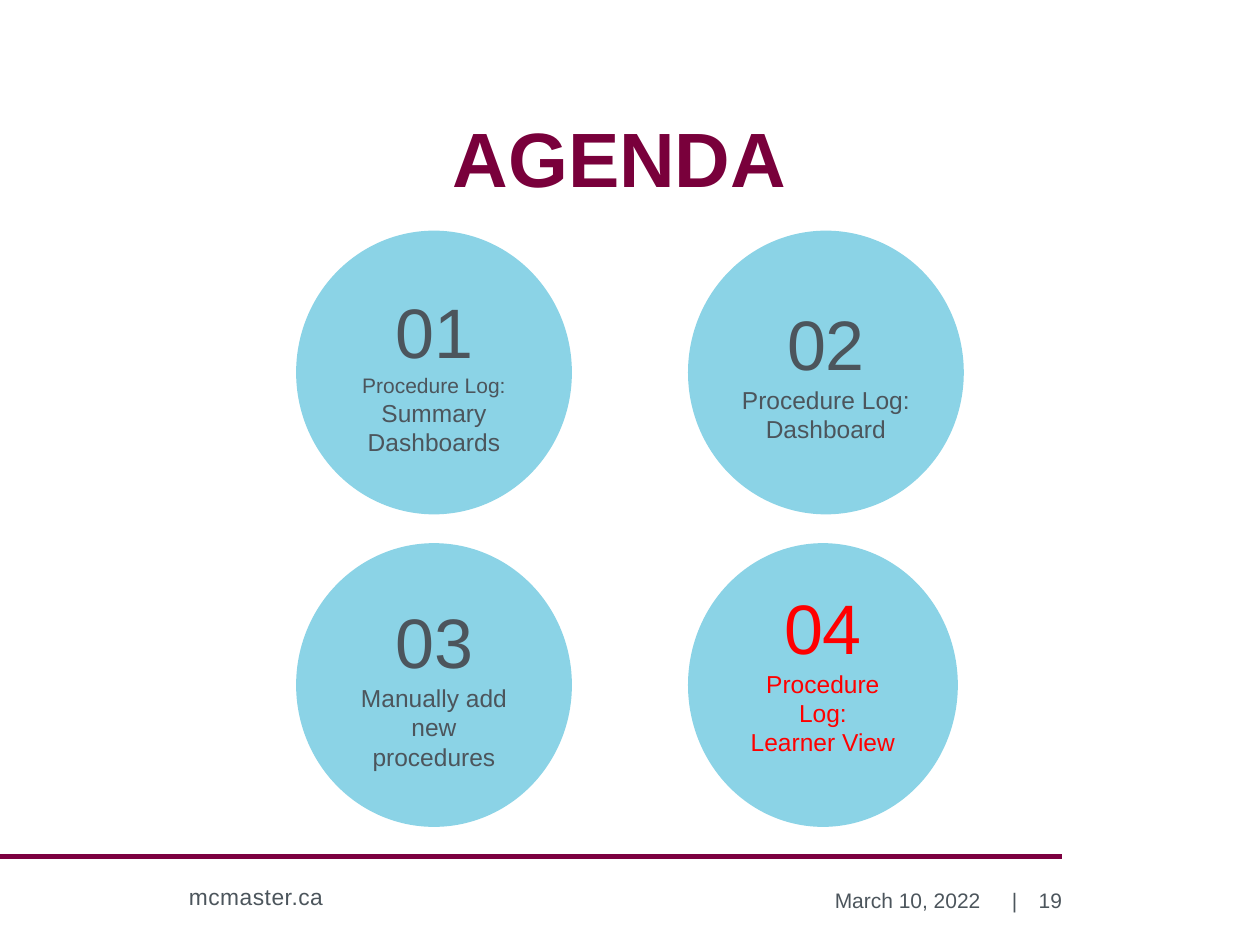
from pptx import Presentation
from pptx.dml.color import RGBColor
from pptx.enum import shapes, text
from pptx.util import Cm, Pt

GREY, RED, SKY = "4C555C", "FF0000", "8BD3E6"
TITLE_MAROON, RULE_MAROON = "79003B", "7C0040"

# number, paragraphs of (text, size) runs, colour, circle width, bottom inset
TOPICS = [
    ("01", [[("Procedure Log: ", 12), ("Summary Dashboards", 14)]], GREY, 5.56, 0.13),
    ("02", [[("Procedure Log: Dashboard", 14)]], GREY, 5.56, 0.13),
    ("03", [[("Manually add new procedures", 14)]], GREY, 5.56, 0.13),
    ("04", [[("Procedure Log:", 14)], [("Learner View", 14)]], RED, 5.44, 0.7),
]
LEFT, TOP, COL_STEP, ROW_STEP, CIRCLE_H = 5.97, 4.65, 7.9, 6.3, 5.72

# text, left, top, width, height, size, alignment, anchor, right inset
L, R = text.PP_ALIGN.LEFT, text.PP_ALIGN.RIGHT
UPPER, MIDDLE = text.MSO_ANCHOR.TOP, text.MSO_ANCHOR.MIDDLE
FOOTER = [
    ("mcmaster.ca", 3.56, 17.68, 6.96, 0.81, 13, L, UPPER, 0.25),
    ("March 10, 2022", 14.58, 17.63, 5.44, 1.02, 12, R, MIDDLE, 0.25),
    ("|", 20.12, 17.63, 0.64, 1.02, 12, R, MIDDLE, 0.25),
    ("19", 20.09, 17.63, 1.32, 1.02, 12, R, MIDDLE, 0),
]


def rgb(value):
    return RGBColor.from_string(value)


def style(font, size, color, bold=False):
    font.name, font.size, font.bold = "Arial", Pt(size), bold
    font.color.rgb = rgb(color)


def add_title(s):
    title = s.shapes.title
    title.left, title.top, title.width, title.height = Cm(0.3), Cm(2.26), Cm(24.38), Cm(1.83)
    tf = title.text_frame
    tf.text = "AGENDA"
    tf.auto_size = text.MSO_AUTO_SIZE.NONE
    tf.vertical_anchor = text.MSO_ANCHOR.BOTTOM
    tf.margin_bottom = 0
    p = tf.paragraphs[0]
    p.alignment, p.line_spacing = text.PP_ALIGN.CENTER, 1.5
    style(p.font, 44, TITLE_MAROON, bold=True)


def add_topic(s, index, number, lines, color, width, bottom):
    row, col = divmod(index, 2)
    sp = s.shapes.add_shape(shapes.MSO_SHAPE.OVAL, Cm(LEFT + col * COL_STEP),
                            Cm(TOP + row * ROW_STEP), Cm(width), Cm(CIRCLE_H))
    sp.shadow.inherit = False
    sp.fill.solid()
    sp.fill.fore_color.rgb = rgb(SKY)
    sp.line.fill.background()
    tf = sp.text_frame
    tf.word_wrap = True
    tf.vertical_anchor = MIDDLE
    tf.margin_bottom = Cm(bottom)
    for i, runs in enumerate([[(number, 40)]] + lines):
        p = tf.paragraphs[0] if i == 0 else tf.add_paragraph()
        p.alignment = text.PP_ALIGN.CENTER
        for words, size in runs:
            r = p.add_run()
            r.text = words
            style(r.font, size, color)


def add_footer(s):
    rule = s.shapes.add_connector(shapes.MSO_CONNECTOR.STRAIGHT,
                                  0, Cm(17.27), Cm(21.41), Cm(17.27))
    rule.line.color.rgb = rgb(RULE_MAROON)
    rule.line.width = Pt(3)
    sp_pr = rule._element.spPr
    sp_pr.append(sp_pr.makeelement(
        "{http://schemas.openxmlformats.org/drawingml/2006/main}effectLst", {}))
    for words, x, y, w, h, size, align, anchor, inset in FOOTER:
        tf = s.shapes.add_textbox(Cm(x), Cm(y), Cm(w), Cm(h)).text_frame
        tf.word_wrap = True
        tf.vertical_anchor = anchor
        tf.margin_right = Cm(inset)
        p = tf.paragraphs[0]
        p.alignment = align
        r = p.add_run()
        r.text = words
        style(p.font, size, GREY)
        if size == 13:
            r.font._element.set("spc", "30")


def main():
    prs = Presentation()
    prs.slide_width, prs.slide_height = Cm(25.4), Cm(19.05)
    s = prs.slides.add_slide(prs.slide_layouts[5])
    add_title(s)
    for i, topic in enumerate(TOPICS):
        add_topic(s, i, *topic)
    add_footer(s)
    prs.save("out.pptx")


if __name__ == "__main__":
    main()
